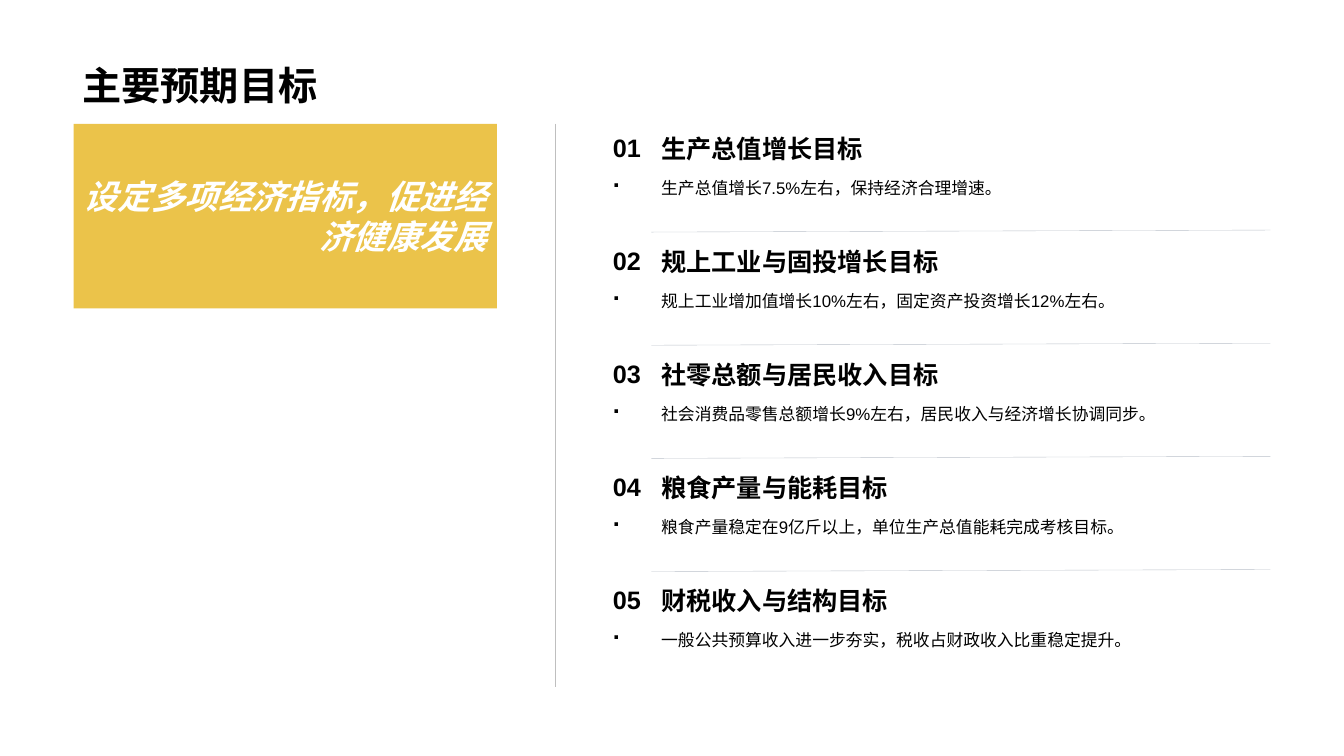
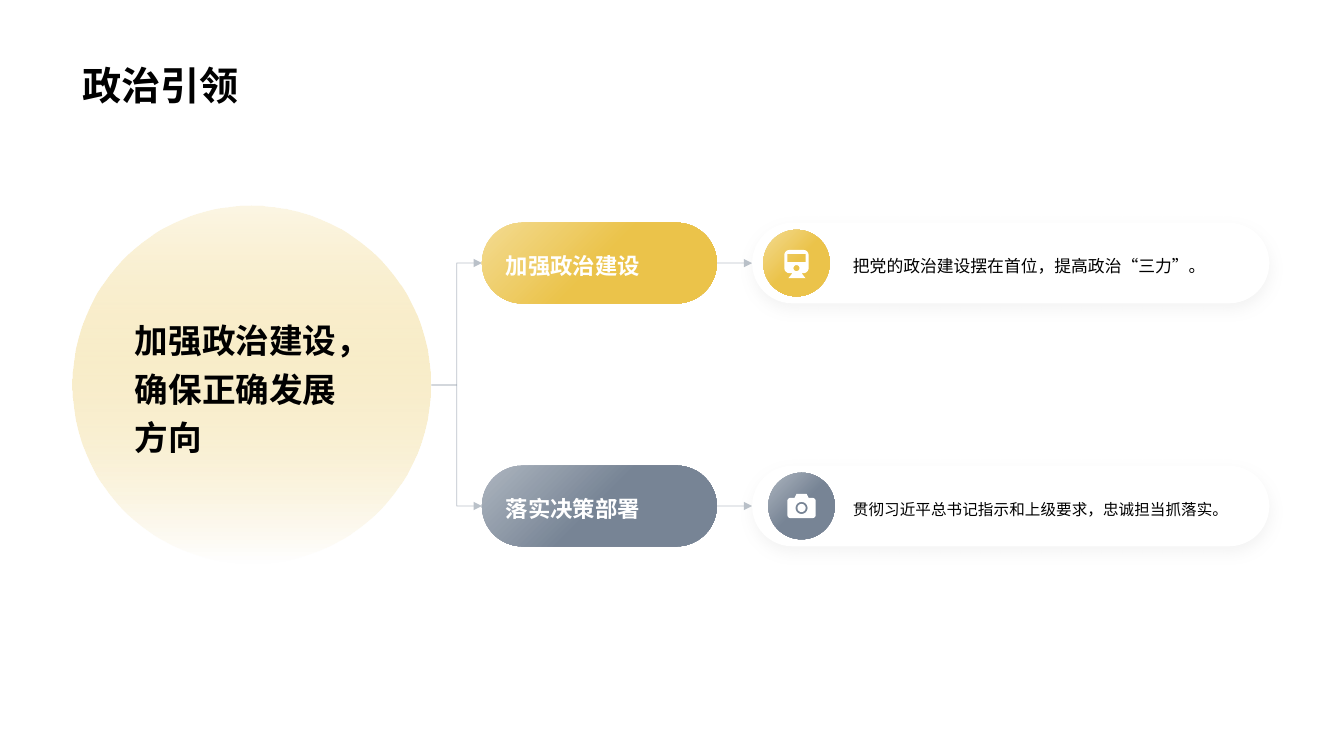
from dataclasses import dataclass
from math import cos, pi, sin
from typing import Optional

from lxml import etree
from pptx import Presentation
from pptx import util as u
from pptx.dml.color import RGBColor
from pptx.enum import lang, shapes, text
from pptx.oxml import ns

GOLD, GOLD_LIGHT = "EBC34A", "F3DB92"
SLATE, SLATE_LIGHT = "778495", "ADB5BF"
WHITE, BLACK, RULE, SHADE = "FFFFFF", "000000", "BFBFBF", "B4B4B4"
LATIN, CJK = "Arial", "Noto Sans CJK SC"
LEFT, RIGHT_EDGE = 0.72, 12.6

Point = tuple[float, float]
Contour = list[Point]
Box = tuple[float, float, float, float]
ALIGN, ANCHOR = text.PP_ALIGN, text.MSO_ANCHOR
SHAPE, LINE = shapes.MSO_SHAPE, shapes.MSO_CONNECTOR


@dataclass(frozen=True)
class TextStyle:
    size: float
    color: str = BLACK
    bold: bool = False
    italic: bool = False
    font: str = LATIN
    spacing: Optional[float] = None
    align: ALIGN = ALIGN.LEFT
    anchor: ANCHOR = ANCHOR.TOP
    inset: Point = (0.1, 0.05)


@dataclass(frozen=True)
class Goal:
    title: str
    detail: str


@dataclass(frozen=True)
class Branch:
    top: float
    label: str
    detail: str
    detail_style: TextStyle
    light: str
    color: str
    badge_left: float
    icon: list[Contour]


TITLE = TextStyle(28, bold=True, anchor=ANCHOR.BOTTOM)
BANNER = TextStyle(24, WHITE, True, True, align=ALIGN.RIGHT, anchor=ANCHOR.MIDDLE)
GOAL_TITLE = TextStyle(18, bold=True, anchor=ANCHOR.BOTTOM)
GOAL_NUMBER = TextStyle(18, bold=True)
GOAL_DETAIL = TextStyle(12, spacing=1.2)
HUB = TextStyle(24, bold=True, spacing=1.2, anchor=ANCHOR.MIDDLE)
PILL = TextStyle(16, WHITE, True, spacing=1.2, anchor=ANCHOR.MIDDLE, inset=(0.12, 0.12))


def card_style(size: float, spacing: float) -> TextStyle:
    return TextStyle(size, font=CJK, spacing=spacing, anchor=ANCHOR.MIDDLE, inset=(0.06, 0.03))


def rgb(value: str) -> RGBColor:
    return RGBColor.from_string(value)


def set_alpha(sp, percent: int) -> None:
    color = next(sp.element.spPr.iter(ns.qn("a:srgbClr")))
    etree.SubElement(color, ns.qn("a:alpha"), val=str(percent * 1000))


def write(sp, words: str, style: TextStyle) -> None:
    tf = sp.text_frame
    tf.word_wrap = True
    tf.vertical_anchor = style.anchor
    tf.margin_left = tf.margin_right = u.Inches(style.inset[0])
    tf.margin_top = tf.margin_bottom = u.Inches(style.inset[1])
    p = tf.paragraphs[0]
    p.alignment = style.align
    if style.spacing:
        p.line_spacing = style.spacing
    r = p.add_run()
    r.text = words
    f = r.font
    f.size, f.bold, f.italic = u.Pt(style.size), style.bold, style.italic
    f.color.rgb = rgb(style.color)
    f.name = style.font
    f.language_id = lang.MSO_LANGUAGE_ID.SIMPLIFIED_CHINESE
    etree.SubElement(r.font._element, ns.qn("a:ea"), typeface=CJK)


def add_text(s, box: Box, words: str, style: TextStyle) -> None:
    write(s.shapes.add_textbox(*map(u.Inches, box)), words, style)


def add_shape(s, kind: SHAPE, box: Box, color: str = WHITE):
    sp = s.shapes.add_shape(kind, *map(u.Inches, box))
    if kind == SHAPE.ROUNDED_RECTANGLE:
        sp.adjustments[0] = 0.5
    sp.fill.solid()
    sp.fill.fore_color.rgb = rgb(color)
    sp.line.fill.background()
    sp.shadow.inherit = False
    return sp


def set_gradient(sp, start: str, end: str, end_at: float, angle: int) -> None:
    sp.fill.gradient()
    sp.fill.gradient_angle = 360 - angle
    for stop, color, position in zip(sp.fill.gradient_stops, (start, end), (0, end_at)):
        stop.color.rgb = rgb(color)
        stop.position = position


def set_soft_shadow(sp) -> None:
    effects = sp.element.spPr.find(ns.qn("a:effectLst"))
    shadow = etree.SubElement(effects, ns.qn("a:outerShdw"), blurRad=str(u.Pt(10)),
                              dist=str(u.Pt(4)), dir="5400000", algn="t", rotWithShape="0")
    color = etree.SubElement(shadow, ns.qn("a:srgbClr"), val=SHADE)
    etree.SubElement(color, ns.qn("a:alpha"), val="15000")


def add_line(s, start: Point, end: Point, color: str = SLATE, width: float = 0.25,
             alpha: int = 50, arrow: bool = False, kind: LINE = LINE.STRAIGHT) -> None:
    c = s.shapes.add_connector(kind, *map(u.Inches, start + end))
    c.line.width = u.Pt(width)
    c.line.color.rgb = rgb(color)
    if alpha < 100:
        set_alpha(c, alpha)
    props = c.element.spPr
    if arrow:
        etree.SubElement(props.find(ns.qn("a:ln")), ns.qn("a:tailEnd"), type="triangle")
    etree.SubElement(props, ns.qn("a:effectLst"))


def rounded(x1: float, y1: float, x2: float, y2: float, radius: float) -> Contour:
    corners = ((x2 - radius, y2 - radius), (x1 + radius, y2 - radius),
               (x1 + radius, y1 + radius), (x2 - radius, y1 + radius))
    return [(cx + radius * cos(a), cy + radius * sin(a))
            for quarter, (cx, cy) in enumerate(corners)
            for a in ((quarter + step / 8) * pi / 2 for step in range(9))]


def circle(cx: float, cy: float, radius: float) -> Contour:
    return rounded(cx - radius, cy - radius, cx + radius, cy + radius, radius)


def add_icon(s, contours: list[Contour]) -> None:
    scaled = [[(u.Inches(x), u.Inches(y)) for x, y in c] for c in contours]
    builder = s.shapes.build_freeform(*scaled[0][0])
    for i, points in enumerate(scaled):
        if i:
            builder.move_to(*points[0])
        builder.add_line_segments(points[1:], close=True)
    sp = builder.convert_to_shape()
    sp.fill.solid()
    sp.fill.fore_color.rgb = rgb(WHITE)
    sp.line.fill.background()
    sp.shadow.inherit = False


TRAIN = [
    rounded(7.78, 2.48, 8.02, 2.71, 0.05),
    [(7.81, 2.52), (7.99, 2.52), (7.99, 2.6), (7.81, 2.6)],
    circle(7.9, 2.66, 0.03),
    [(7.86, 2.71), (7.95, 2.71), (7.99, 2.76), (7.82, 2.76)],
]
CAMERA = [
    rounded(7.81, 4.94, 8.09, 5.14, 0.03),
    [(7.88, 4.94), (7.9, 4.9), (8.0, 4.9), (8.02, 4.94)],
    circle(7.95, 5.04, 0.06),
    circle(7.95, 5.04, 0.04),
]
GOALS = [
    Goal("生产总值增长目标", "生产总值增长7.5%左右，保持经济合理增速。"),
    Goal("规上工业与固投增长目标", "规上工业增加值增长10%左右，固定资产投资增长12%左右。"),
    Goal("社零总额与居民收入目标", "社会消费品零售总额增长9%左右，居民收入与经济增长协调同步。"),
    Goal("粮食产量与能耗目标", "粮食产量稳定在9亿斤以上，单位生产总值能耗完成考核目标。"),
    Goal("财税收入与结构目标", "一般公共预算收入进一步夯实，税收占财政收入比重稳定提升。"),
]
BRANCHES = [
    Branch(2.21, "加强政治建设", "把党的政治建设摆在首位，提高政治“三力”。",
           card_style(12, 1.2), GOLD_LIGHT, GOLD, 7.57, TRAIN),
    Branch(4.62, "落实决策部署", "贯彻习近平总书记指示和上级要求，忠诚担当抓落实。",
           card_style(11.1, 1.3), SLATE_LIGHT, SLATE, 7.62, CAMERA),
]


def add_slide(prs, title: str):
    s = prs.slides.add_slide(prs.slide_layouts[6])
    add_text(s, (LEFT, 0.14, RIGHT_EDGE - LEFT, 0.98), title, TITLE)
    return s


def add_goals(prs) -> None:
    s = add_slide(prs, "主要预期目标")
    top, pitch, left = 1.23, 4.49 / 4, 6.46
    width = RIGHT_EDGE - left
    banner = add_shape(s, SHAPE.RECTANGLE, (0.73, top, 4.2, 1.83), GOLD)
    write(banner, "设定多项经济指标，促进经济健康发展", BANNER)
    add_line(s, (5.51, top), (5.51, 6.82), RULE, alpha=100)
    for i, goal in enumerate(GOALS):
        y = top + i * pitch
        if i:
            add_line(s, (left, y - 0.05), (RIGHT_EDGE, y - 0.07))
        add_text(s, (left, y, width, 0.44), goal.title, GOAL_TITLE)
        add_text(s, (5.98, y + 0.03, 0.48, 0.4), f"{i + 1:02}.", GOAL_NUMBER)
        add_text(s, (left, y + 0.44, width, 0.56), goal.detail, GOAL_DETAIL)


def add_branch(s, b: Branch, hub: Point) -> None:
    pill_left, pill_width, card_left, height = 4.78, 2.33, 7.46, 0.8
    middle = b.top + height / 2
    add_line(s, hub, (pill_left, middle), width=0.5, arrow=True, kind=LINE.ELBOW)
    add_line(s, (pill_left + pill_width, middle), (card_left, middle), width=0.5, arrow=True)
    pill = add_shape(s, SHAPE.ROUNDED_RECTANGLE, (pill_left, b.top, pill_width, height))
    set_gradient(pill, b.light, b.color, 0.5, 45)
    write(pill, b.label, PILL)
    card = add_shape(s, SHAPE.ROUNDED_RECTANGLE, (card_left, b.top, 5.13, height))
    set_soft_shadow(card)
    add_text(s, (8.4, b.top + 0.15, 4.18, 0.51), b.detail, b.detail_style)
    badge = add_shape(s, SHAPE.OVAL, (b.badge_left, b.top + 0.07, 0.66, 0.66))
    set_gradient(badge, b.light, b.color, 0.5, 45)
    add_icon(s, b.icon)


def add_leadership(prs) -> None:
    s = add_slide(prs, "政治引领")
    top, diameter = 2.04, 3.55
    hub = add_shape(s, SHAPE.OVAL, (LEFT, top, diameter, diameter))
    set_gradient(hub, GOLD, WHITE, 1, 90)
    set_alpha(hub, 15)
    write(hub, "加强政治建设，确保正确发展方向", HUB)
    for branch in BRANCHES:
        add_branch(s, branch, (4.28, 3.82))


def main() -> None:
    prs = Presentation()
    prs.slide_width, prs.slide_height = u.Inches(13.33), u.Inches(7.5)
    add_goals(prs)
    add_leadership(prs)
    prs.save("out.pptx")


if __name__ == "__main__":
    main()
